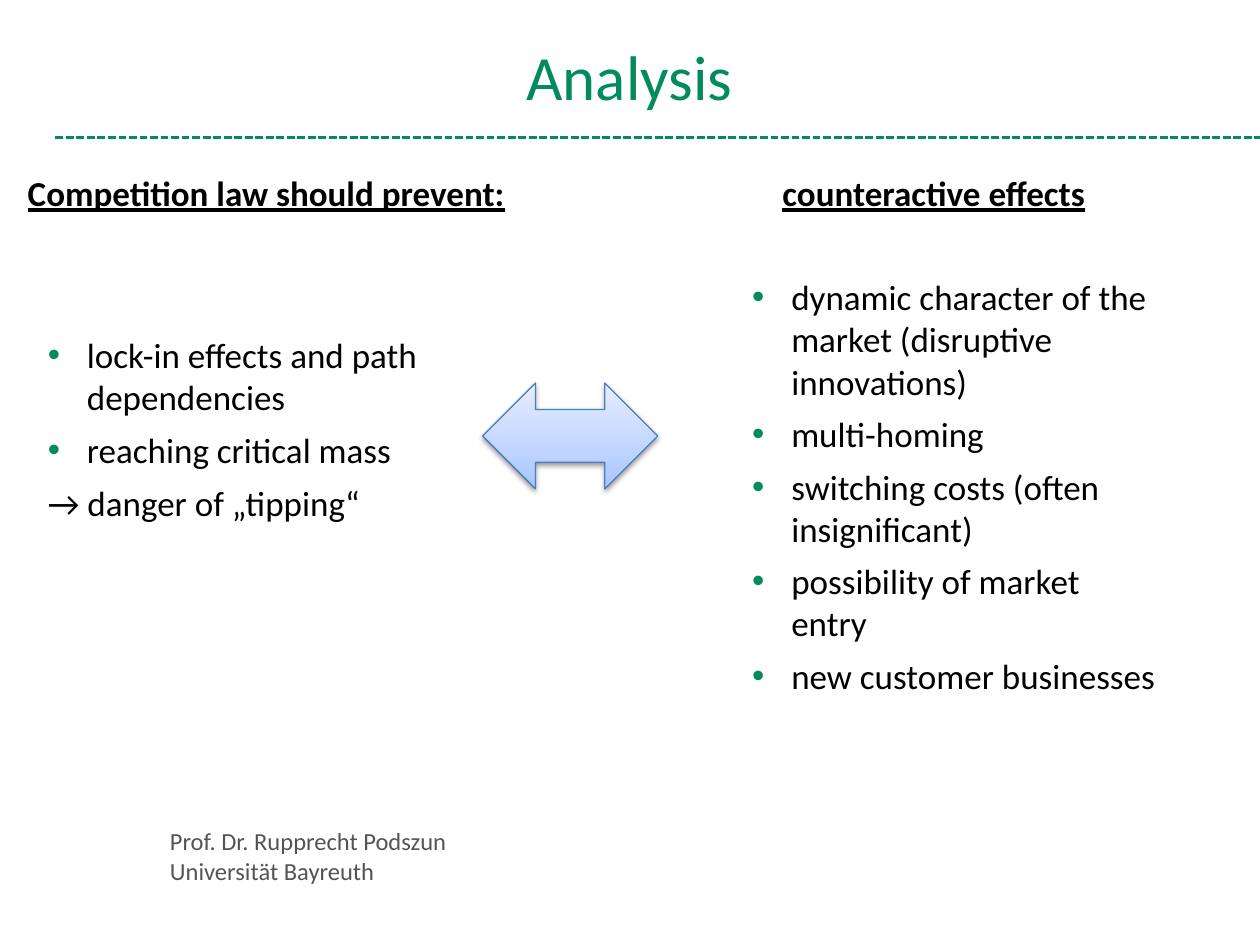
from lxml.etree import SubElement
from pptx import Presentation
from pptx.dml.color import RGBColor
from pptx.enum.dml import MSO_LINE
from pptx.enum.shapes import MSO_CONNECTOR, MSO_SHAPE
from pptx.enum.text import MSO_ANCHOR, MSO_AUTO_SIZE, PP_ALIGN
from pptx.oxml.ns import qn
from pptx.util import Inches, Pt

# Content
TITLE = "Analysis"
COLUMNS = [
    {
        "heading": "Competition law should prevent:",
        "heading_box": (0.12, 1.31, 5.0, 0.44),
        "bullets": ["lock-in effects and path dependencies", "reaching critical mass"],
        "conclusion": ["→ danger of „tipping“"],
        "list_box": (0.28, 2.6, 4.09, 3.3),
    },
    {
        "heading": "counteractive effects",
        "heading_box": (6.11, 1.31, 3.8, 0.44),
        "bullets": [
            "dynamic character of the market (disruptive innovations)",
            "multi-homing",
            "switching costs (often insignificant)",
            "possibility of market entry",
            "new customer businesses",
        ],
        "conclusion": [],
        "list_box": (5.87, 2.14, 3.46, 3.47),
    },
]
AUTHOR = ["Prof. Dr. Rupprecht Podszun", "Universität Bayreuth"]

FONT = "Calibri"
COLORS = {"green": "038A5E", "text": "000000", "grey": "545454",
          "arrow_line": "4B7EBC", "shadow": "000000"}
ARROW_STOPS = [(0, "A4C4FF"), (35, "BFD4FF"), (100, "E6EEFF")]


def rgb(name):
    return RGBColor.from_string(COLORS[name])


def place(sp, box):
    sp.left, sp.top, sp.width, sp.height = map(Inches, box)


def write(sp, lines, size=20, color="text", bold=False, underline=False,
          align=PP_ALIGN.LEFT, anchor=MSO_ANCHOR.TOP, after=0, bullets=0):
    """Fill a shape with paragraphs; the first `bullets` of them get a bullet."""
    tf = sp.text_frame
    tf.word_wrap = True
    tf.auto_size = MSO_AUTO_SIZE.NONE
    tf.vertical_anchor = anchor
    for i, line in enumerate(lines):
        p = tf.paragraphs[0] if i == 0 else tf.add_paragraph()
        p.alignment = align
        p.line_spacing = 1.0
        p.space_before, p.space_after = Pt(0), Pt(after)
        pPr = p._p.get_or_add_pPr()
        indent = Inches(0.31) if i < bullets else 0
        pPr.set("marL", str(indent))
        pPr.set("indent", str(-indent))
        if i < bullets:
            clr = SubElement(pPr, qn("a:buClr"))
            SubElement(clr, qn("a:srgbClr"), val=COLORS["green"])
            SubElement(pPr, qn("a:buFont"), typeface="Arial")
            SubElement(pPr, qn("a:buChar"), char="•")
        else:
            SubElement(pPr, qn("a:buNone"))
        r = p.add_run()
        r.text = line
        r.font.name, r.font.size = FONT, Pt(size)
        r.font.bold, r.font.underline = bold, underline
        r.font.color.rgb = rgb(color)


prs = Presentation()
prs.slide_width, prs.slide_height = Inches(10), Inches(7.5)
s = prs.slides.add_slide(prs.slide_layouts.get_by_name("Comparison"))
title, *bodies = s.placeholders

# Title and dashed rule
place(title, (0.43, 0.24, 9.13, 0.71))
write(title, [TITLE], size=36, color="green", align=PP_ALIGN.CENTER,
      anchor=MSO_ANCHOR.MIDDLE)
rule = s.shapes.add_connector(MSO_CONNECTOR.STRAIGHT, Inches(0.44), Inches(1.09),
                              Inches(10), Inches(1.09))
rule.line.color.rgb = rgb("green")
rule.line.width = Pt(1.5)
rule.line.dash_style = MSO_LINE.SQUARE_DOT
SubElement(rule._element.spPr, qn("a:effectLst"))

# Two columns, each a heading and a list
for col, heading, body in zip(COLUMNS, bodies[::2], bodies[1::2]):
    place(heading, col["heading_box"])
    write(heading, [col["heading"]], bold=True, underline=True)
    place(body, col["list_box"])
    write(body, col["bullets"] + col["conclusion"], after=6,
          bullets=len(col["bullets"]))

# Double arrow with gradient and soft shadow
arrow = s.shapes.add_shape(MSO_SHAPE.LEFT_RIGHT_ARROW, Inches(3.83), Inches(3.04),
                           Inches(1.39), Inches(0.84))
arrow.fill.gradient()
arrow.fill.gradient_angle = 90
arrow.line.color.rgb = rgb("arrow_line")
arrow.line.width = Pt(0.75)
arrow.shadow.inherit = False
spPr = arrow._element.spPr
stops = spPr.find(qn("a:gradFill")).find(qn("a:gsLst"))
for gs in list(stops):
    stops.remove(gs)
for pos, color in ARROW_STOPS:
    gs = SubElement(stops, qn("a:gs"), pos=str(pos * 1000))
    SubElement(gs, qn("a:srgbClr"), val=color)
shadow = SubElement(spPr.find(qn("a:effectLst")), qn("a:outerShdw"),
                    blurRad=str(Pt(3.1)), dist=str(Pt(1.6)), dir="5400000",
                    rotWithShape="0")
clr = SubElement(shadow, qn("a:srgbClr"), val=COLORS["shadow"])
SubElement(clr, qn("a:alpha"), val="38000")

# Author
author = s.shapes.add_textbox(Inches(1.25), Inches(6.51), Inches(8.19), Inches(0.57))
write(author, AUTHOR, size=14, color="grey")

prs.save("out.pptx")
